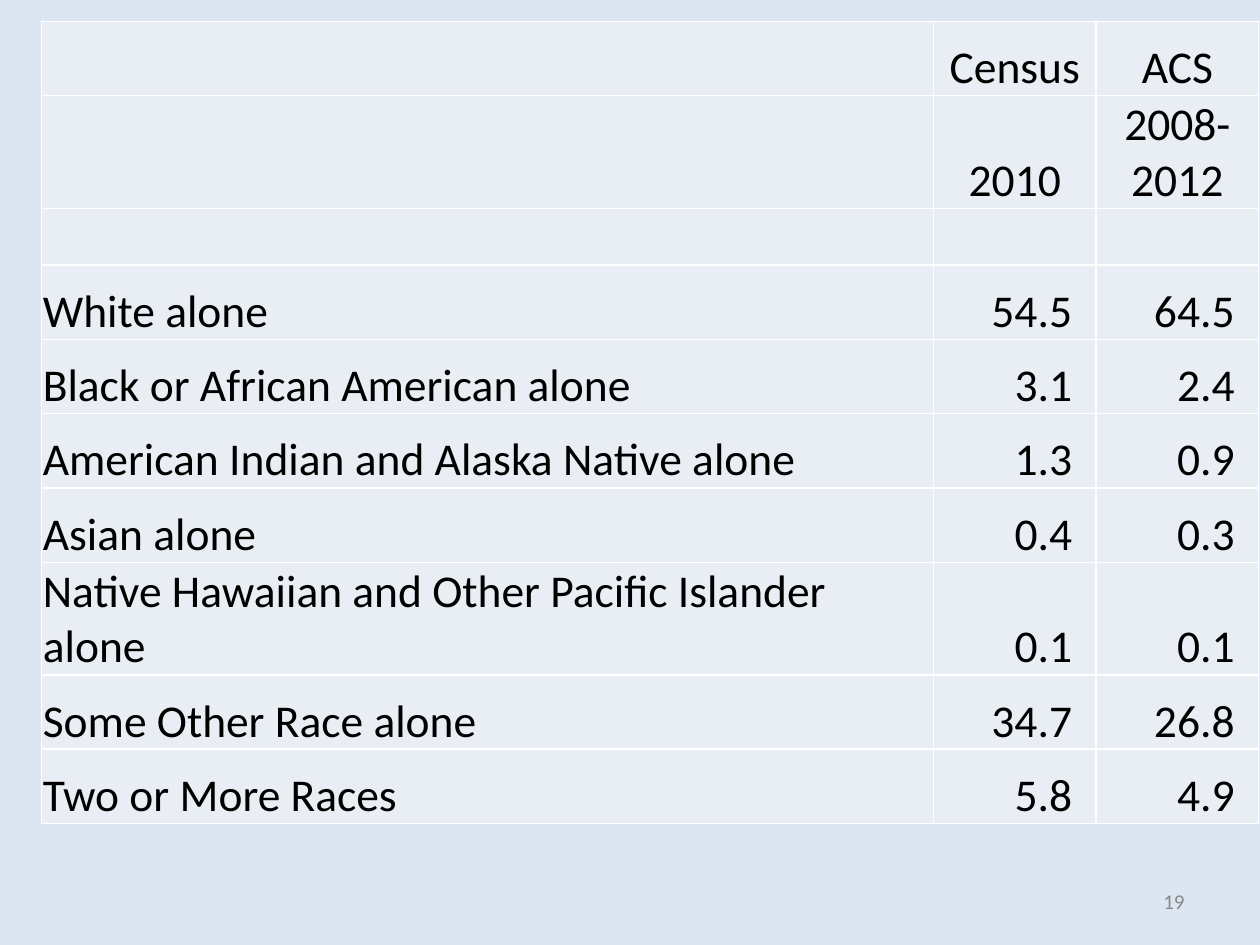
import pptx
import pptx.util
import pptx.dml.color
import pptx.enum.text
import pptx.oxml.ns
import lxml.etree

Inches = pptx.util.Inches
ALIGN = pptx.enum.text.PP_ALIGN
ANCHOR = pptx.enum.text.MSO_ANCHOR

HEADS = [("", "Census", "ACS"), ("", "2010", "2008-2012"), ("", "", "")]
RACES = [
    ("White alone", "54.5", "64.5"),
    ("Black or African American alone", "3.1", "2.4"),
    ("American Indian and Alaska Native alone", "1.3", "0.9"),
    ("Asian alone", "0.4", "0.3"),
    ("Native Hawaiian and Other Pacific Islander alone", "0.1", "0.1"),
    ("Some Other Race alone", "34.7", "26.8"),
    ("Two or More Races", "5.8", "4.9"),
]
WIDTHS = [7.08, 1.29, 1.29]
ROW = 0.59
TALL = {1: 0.89, 2: 0.45, 7: 0.89}


def color(code):
    """Turn a hex string into a colour."""
    return pptx.dml.color.RGBColor.from_string(code)


def assign(item, values):
    """Set attributes from a dict."""
    for name, value in values.items():
        setattr(item, name, value)


def write(frame, text, size, code, align):
    """Put one styled line of text in a frame."""
    para = frame.paragraphs[0]
    para.alignment = align
    run = para.add_run()
    run.text = text
    assign(run.font, {"size": pptx.util.Pt(size), "name": "Calibri"})
    run.font.color.rgb = color(code)


def border(cell, code):
    """Draw a one-point line on each side of a cell."""
    props = cell._tc.get_or_add_tcPr()
    qn = pptx.oxml.ns.qn
    for side in ("a:lnL", "a:lnR", "a:lnT", "a:lnB"):
        line = lxml.etree.SubElement(props, qn(side), w=str(pptx.util.Pt(1)))
        fill = lxml.etree.SubElement(line, qn("a:solidFill"))
        lxml.etree.SubElement(fill, qn("a:srgbClr"), val=code)


def style(cell, text, align, right):
    """Format a cell and write its text."""
    border(cell, "FFFFFF")
    cell.fill.solid()
    cell.fill.fore_color.rgb = color("E9EDF4")
    assign(cell, {
        "vertical_anchor": ANCHOR.BOTTOM,
        "margin_left": Inches(0.01),
        "margin_top": Inches(0.01),
        "margin_right": Inches(right),
        "margin_bottom": 0,
    })
    if text:
        write(cell.text_frame, text, 26, "000000", align)


def grid(slide):
    """Add the table of race shares."""
    data = HEADS + RACES
    tall = [TALL.get(i, ROW) for i in range(len(data))]
    frame = slide.shapes.add_table(
        len(data), len(WIDTHS), Inches(0.33), Inches(0.17),
        Inches(sum(WIDTHS)), Inches(sum(tall)))
    table = frame.table
    assign(table, {"first_row": False, "horz_banding": False})
    for col, width in zip(table.columns, WIDTHS):
        col.width = Inches(width)
    for i, texts in enumerate(data):
        table.rows[i].height = Inches(tall[i])
        for j, text in enumerate(texts):
            if i < len(HEADS):
                align, right = ALIGN.CENTER, 0.01
            elif j == 0:
                align, right = ALIGN.LEFT, 0.01
            else:
                align, right = ALIGN.RIGHT, 0.19
            style(table.cell(i, j), text, align, right)


def number(slide, text):
    """Add the page number."""
    box = slide.shapes.add_textbox(
        Inches(7.17), Inches(6.95), Inches(2.33), Inches(0.4))
    frame = box.text_frame
    assign(frame, {"word_wrap": True, "vertical_anchor": ANCHOR.MIDDLE})
    write(frame, text, 12, "898989", ALIGN.RIGHT)


def main():
    """Build and save the slide."""
    deck = pptx.Presentation()
    assign(deck, {"slide_width": Inches(10), "slide_height": Inches(7.5)})
    slide = deck.slides.add_slide(deck.slide_layouts[6])
    slide.background.fill.solid()
    slide.background.fill.fore_color.rgb = color("DCE6F2")
    grid(slide)
    number(slide, "19")
    deck.save("out.pptx")


if __name__ == "__main__":
    main()
